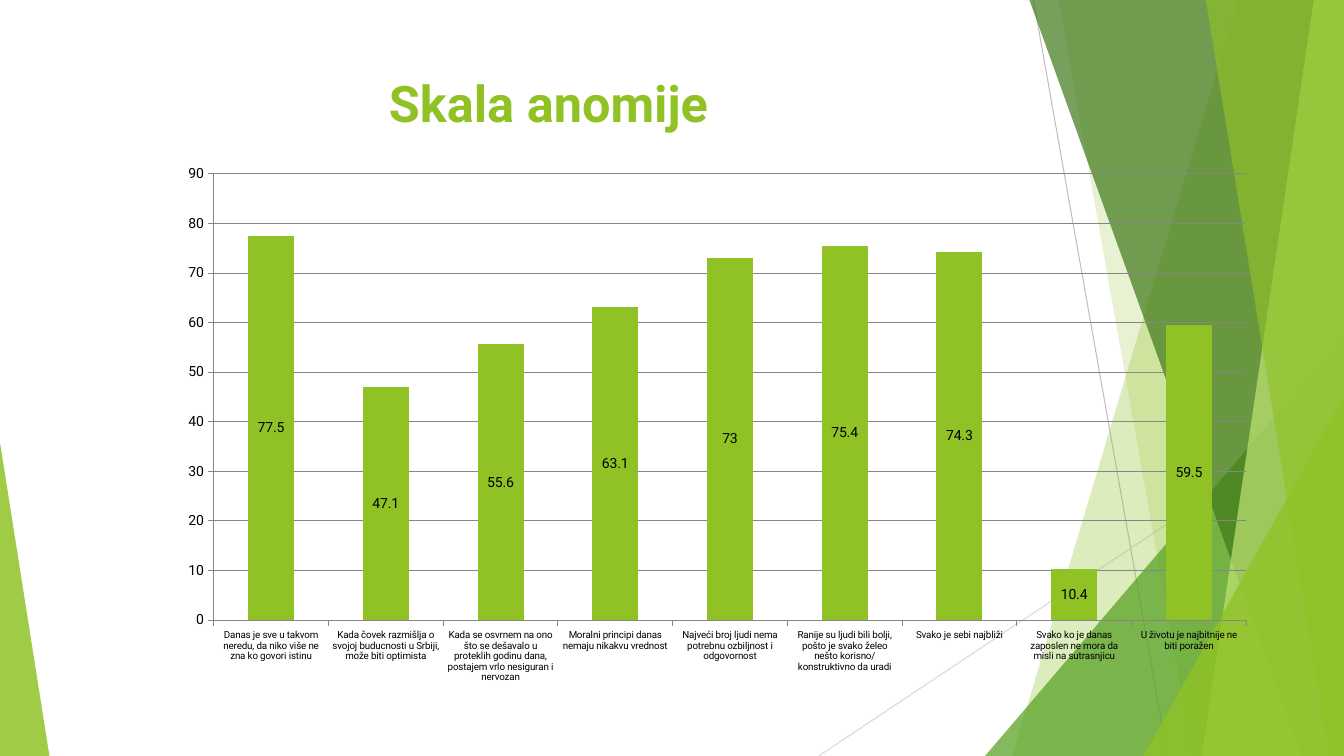
from dataclasses import dataclass

from lxml.etree import SubElement
from pptx import Presentation
from pptx.chart.data import CategoryChartData
from pptx.dml.color import RGBColor
from pptx.enum.chart import XL_CHART_TYPE as ChartType, XL_LABEL_POSITION as LabelPosition
from pptx.enum.chart import XL_TICK_MARK as TickMark
from pptx.enum.shapes import MSO_CONNECTOR as Connector, MSO_SHAPE as Preset
from pptx.enum.text import MSO_ANCHOR as Anchor, PP_ALIGN as Align
from pptx.oxml.ns import qn
from pptx.util import Inches, Pt

WIDTH, HEIGHT = 13.33, 7.5
GREEN = "90C226"
GRID_GREY = "868686"
FONT = "Roboto"


@dataclass(frozen=True)
class Ray:
    start: tuple[float, float]
    end: tuple[float, float]
    color: str


@dataclass(frozen=True)
class Facet:
    top_left: float
    bottom_left: float
    color: str
    opacity: int


@dataclass(frozen=True)
class Wedge:
    left: float
    top: float
    width: float
    apex: float
    color: str
    opacity: int


@dataclass(frozen=True)
class Statement:
    wording: str
    agreement: float


RAYS = [
    Ray((10.25, 0), (11.58, HEIGHT), "BFBFBF"),
    Ray((WIDTH, 4.03), (8.12, HEIGHT), "D9D9D9"),
]

PANES = [
    Facet(12.28, 10.04, GREEN, 30),
    Facet(10.5, 11.83, GREEN, 20),
    Wedge(9.77, 3.33, 3.56, 1, "54A021", 72),
    Facet(10.21, 12.91, "3F7819", 70),
    Facet(13.03, 11.92, "C0E474", 70),
    Facet(11.96, 13.18, GREEN, 65),
    Wedge(11.34, 3.93, 1.99, 1, GREEN, 80),
    Wedge(0, 4.39, 0.49, 0, GREEN, 85),
]

STATEMENTS = [
    Statement("Danas je sve u takvom neredu, da niko više ne zna ko govori istinu", 77.5),
    Statement("Kada čovek razmišlja o svojoj buducnosti u Srbiji, može biti optimista", 47.1),
    Statement("Kada se osvrnem na ono što se dešavalo u proteklih godinu dana, "
              "postajem vrlo nesiguran i nervozan", 55.6),
    Statement("Moralni principi danas nemaju nikakvu vrednost", 63.1),
    Statement("Najveći broj ljudi nema potrebnu ozbiljnost i odgovornost", 73),
    Statement("Ranije su ljudi bili bolji, pošto je svako želeo nešto "
              "korisno/konstruktivno da uradi", 75.4),
    Statement("Svako je sebi najbliži", 74.3),
    Statement("Svako ko je danas zaposlen ne mora da misli na sutrasnjicu", 10.4),
    Statement("U životu je najbitnije ne biti poražen", 59.5),
]


def rgb(value: str) -> RGBColor:
    return RGBColor.from_string(value)


def style_font(font, size: float, color: str, bold: bool = False) -> None:
    font.name = FONT
    font.size = Pt(size)
    font.bold = bold
    font.color.rgb = rgb(color)


def draw_ray(slide, ray: Ray) -> None:
    points = [Inches(value) for value in (*ray.start, *ray.end)]
    line = slide.shapes.add_connector(Connector.STRAIGHT, *points)
    line.line.color.rgb = rgb(ray.color)
    line.line.width = Pt(0.75)
    SubElement(line._element.spPr, qn("a:effectLst"))


def draw_pane(slide, pane: Facet | Wedge) -> None:
    if isinstance(pane, Wedge):
        shape = slide.shapes.add_shape(
            Preset.ISOSCELES_TRIANGLE, Inches(pane.left), Inches(pane.top),
            Inches(pane.width), Inches(HEIGHT - pane.top))
        shape.adjustments[0] = pane.apex
    else:
        outline = slide.shapes.build_freeform(Inches(pane.top_left), 0)
        corners = [(WIDTH, 0), (WIDTH, HEIGHT), (pane.bottom_left, HEIGHT)]
        outline.add_line_segments([(Inches(x), Inches(y)) for x, y in corners])
        shape = outline.convert_to_shape()
    shape.shadow.inherit = False
    shape.line.fill.background()
    shape.fill.solid()
    shape.fill.fore_color.rgb = rgb(pane.color)
    tint = shape._element.spPr.find(qn("a:solidFill"))[0]
    SubElement(tint, qn("a:alpha"), val=str(pane.opacity * 1000))


def write_title(slide, wording: str) -> None:
    title = slide.shapes.title
    slide.shapes._spTree.append(title._element)
    title.left, title.top = Inches(0.74), Inches(0.67)
    title.width, title.height = Inches(9.4), Inches(1.44)
    title.text_frame.text = wording
    title.text_frame.vertical_anchor = Anchor.TOP
    heading = title.text_frame.paragraphs[0]
    heading.alignment = Align.CENTER
    style_font(heading.font, 36, GREEN, bold=True)


def draw_chart(slide, statements: list[Statement]) -> None:
    data = CategoryChartData()
    data.categories = [statement.wording for statement in statements]
    data.add_series("Series 1", [statement.agreement for statement in statements])
    chart = slide.shapes.add_chart(
        ChartType.COLUMN_STACKED, Inches(1.65), Inches(1.54),
        Inches(10.93), Inches(5.34), data).chart
    chart.has_legend = False
    chart.has_title = False
    style_font(chart.font, 10, "000000")

    plot = chart.plots[0]
    plot.gap_width = 150
    plot.overlap = 100
    plot.vary_by_categories = False
    plot.has_data_labels = True
    plot.data_labels.show_value = True
    plot.data_labels.position = LabelPosition.CENTER
    style_font(plot.data_labels.font, 10, "000000")
    bars = plot.series[0].format.fill
    bars.solid()
    bars.fore_color.rgb = rgb(GREEN)

    scale = chart.value_axis
    scale.minimum_scale, scale.maximum_scale, scale.major_unit = 0, 90, 10
    scale.has_major_gridlines = True
    scale.major_gridlines.format.line.color.rgb = rgb(GRID_GREY)
    for axis, size in ((scale, 10), (chart.category_axis, 7)):
        axis.major_tick_mark = TickMark.OUTSIDE
        axis.minor_tick_mark = TickMark.NONE
        axis.format.line.color.rgb = rgb(GRID_GREY)
        style_font(axis.tick_labels.font, size, "000000")


def main() -> None:
    deck = Presentation()
    deck.slide_width, deck.slide_height = Inches(WIDTH), Inches(HEIGHT)
    slide = deck.slides.add_slide(deck.slide_layouts[5])
    for ray in RAYS:
        draw_ray(slide, ray)
    for pane in PANES:
        draw_pane(slide, pane)
    write_title(slide, "Skala anomije")
    draw_chart(slide, STATEMENTS)
    deck.save("out.pptx")


if __name__ == "__main__":
    main()
